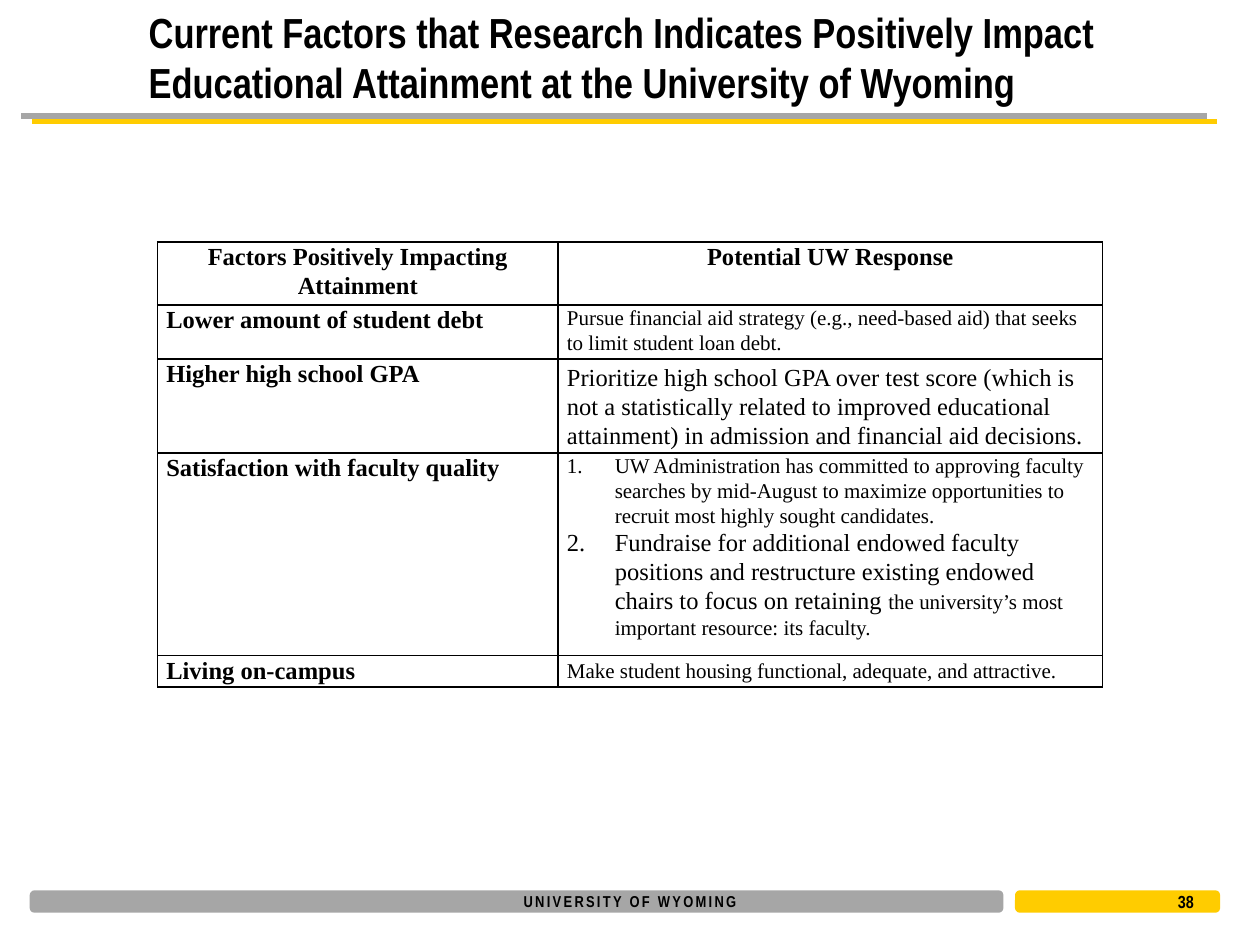
from dataclasses import dataclass

from lxml.etree import SubElement
from pptx import Presentation
from pptx.dml.color import RGBColor
from pptx.enum.shapes import MSO_CONNECTOR, MSO_SHAPE
from pptx.enum.text import MSO_ANCHOR, MSO_AUTO_SIZE, PP_ALIGN
from pptx.oxml.ns import qn
from pptx.util import Inches, Pt


@dataclass(frozen=True)
class Theme:
    """Colours, fonts and type sizes of the slide."""
    ink: str = "000000"
    grey: str = "A6A6A6"
    gold: str = "FFCC00"
    heading_font: str = "Arial Narrow"
    table_font: str = "Times New Roman"
    title: int = 24
    large: int = 14
    small: int = 12
    page: int = 10
    footer: int = 9


THEME = Theme()
HEADERS = ("Factors Positively Impacting Attainment", "Potential UW Response")
FACTORS = [
    ("Lower amount of student debt", MSO_ANCHOR.TOP, [[
        ("Pursue financial aid strategy (e.g., need-based aid) that seeks to limit "
         "student loan debt.", THEME.small)]]),
    ("Higher high school GPA", MSO_ANCHOR.MIDDLE, [[
        ("Prioritize high school GPA over test score (which is not a statistically related "
         "to improved educational attainment) in admission and financial aid decisions.",
         THEME.large)]]),
    ("Satisfaction with faculty quality", MSO_ANCHOR.TOP, [
        [("UW Administration has committed to approving faculty searches by mid-August to "
          "maximize opportunities to recruit most highly sought candidates.", THEME.small)],
        [("Fundraise for additional endowed faculty positions and restructure existing "
          "endowed chairs to focus on retaining ", THEME.large),
         ("the university’s most important resource: its faculty.", THEME.small)]]),
    ("Living on-campus", MSO_ANCHOR.MIDDLE, [[
        ("Make student housing functional, adequate, and attractive.", THEME.small)]]),
]
FACTOR_WIDTH = 3.18


def write(paragraph, text, size, font=THEME.heading_font, bold=True, align=PP_ALIGN.LEFT,
          line_spacing=None, tracking=None):
    """Append a formatted run to a paragraph."""
    paragraph.alignment = align
    if line_spacing:
        paragraph.line_spacing = line_spacing
    run = paragraph.add_run()
    run.text = text
    run.font.name, run.font.size, run.font.bold = font, Pt(size), bold
    run.font.color.rgb = RGBColor.from_string(THEME.ink)
    if tracking:
        run.font._element.set("spc", str(tracking))


def add_label(slide, box, text, margin=0.1, **style):
    """Place one line of text, vertically centred, in a box."""
    frame = slide.shapes.add_textbox(*map(Inches, box)).text_frame
    frame.word_wrap = True
    frame.margin_left = frame.margin_right = Inches(margin)
    frame.vertical_anchor = MSO_ANCHOR.MIDDLE
    write(frame.paragraphs[0], text, **style)


def add_bar(slide, box, color):
    """Draw a rounded footer bar."""
    bar = slide.shapes.add_shape(MSO_SHAPE.ROUNDED_RECTANGLE, *map(Inches, box))
    bar.shadow.inherit = False
    bar.fill.solid()
    bar.fill.fore_color.rgb = bar.line.color.rgb = RGBColor.from_string(color)
    bar.line.width = Pt(2)


def add_title(slide, box):
    """Place the slide title in its placeholder."""
    title = slide.shapes.title
    title.left, title.top, title.width, title.height = map(Inches, box)
    frame = title.text_frame
    frame.word_wrap = True
    frame.auto_size = MSO_AUTO_SIZE.NONE
    frame.vertical_anchor = MSO_ANCHOR.MIDDLE
    write(frame.paragraphs[0], "Current Factors that Research Indicates Positively Impact "
          "Educational Attainment at the University of Wyoming", THEME.title)


def add_rule(slide, left, top, width):
    """Draw the grey rule with its hard gold shadow."""
    rule = slide.shapes.add_connector(
        MSO_CONNECTOR.STRAIGHT, *map(Inches, (left, top, left + width, top)))
    rule.line.color.rgb = RGBColor.from_string(THEME.grey)
    rule.line.width = Pt(3)
    effects = SubElement(rule._element.spPr, qn("a:effectLst"))
    shadow = SubElement(effects, qn("a:outerShdw"), blurRad="0", dist=str(Pt(6.7)),
                        dir=str(27 * 60000), algn="ctr", rotWithShape="0")
    SubElement(shadow, qn("a:srgbClr"), val=THEME.gold)


def add_footer(slide, left, top, width, height):
    """Draw the footer bars, the university name and the page number."""
    page_width, gap = 1.6, 0.12
    add_bar(slide, (left, top, width - page_width - gap, height), THEME.grey)
    add_bar(slide, (left + width - page_width, top, page_width, height), THEME.gold)
    add_label(slide, (left + 3.85, top - 0.05, 1.8, 0.25), "UNIVERSITY OF WYOMING",
              margin=0, size=THEME.footer, align=PP_ALIGN.CENTER, tracking=130)
    add_label(slide, (left + 9, top - 0.02, 0.5, 0.19), "38", size=THEME.page)


def number_paragraph(paragraph):
    """Give a paragraph a hanging automatic number."""
    properties = paragraph._p.get_or_add_pPr()
    properties.set("marL", str(Inches(0.38)))
    properties.set("indent", str(-Inches(0.38)))
    SubElement(properties, qn("a:buFont"), typeface="+mj-lt")
    SubElement(properties, qn("a:buAutoNum"), type="arabicPeriod")


def fill_cell(cell, paragraphs, anchor=MSO_ANCHOR.TOP, **style):
    """Border a cell and write its paragraphs, numbered when several."""
    cell.margin_left = cell.margin_right = Inches(0.07)
    cell.margin_top = cell.margin_bottom = 0
    cell.vertical_anchor = anchor
    for side in ("lnL", "lnR", "lnT", "lnB"):
        border = SubElement(cell._tc.get_or_add_tcPr(), qn(f"a:{side}"), w=str(Pt(1)))
        SubElement(SubElement(border, qn("a:solidFill")), qn("a:srgbClr"), val=THEME.ink)
    cell.fill.background()
    frame = cell.text_frame
    for index, runs in enumerate(paragraphs):
        paragraph = frame.add_paragraph() if index else frame.paragraphs[0]
        if len(paragraphs) > 1:
            number_paragraph(paragraph)
        for text, size in runs:
            write(paragraph, text, size, font=THEME.table_font, line_spacing=1.07, **style)


def add_factor_table(slide, left, top, width, height):
    """Build the table of factors and responses, its rows as tall as their text."""
    holder = slide.shapes.add_table(
        len(FACTORS) + 1, len(HEADERS), *map(Inches, (left, top, width, height)))
    table = holder.table
    table.first_row = table.horz_banding = False
    for column, column_width in zip(table.columns, (FACTOR_WIDTH, width - FACTOR_WIDTH)):
        column.width = Inches(column_width)
    for row in table.rows:
        row.height = Inches(0)
    holder.height = Inches(height)
    for column, header in enumerate(HEADERS):
        fill_cell(table.cell(0, column), [[(header, THEME.large)]], align=PP_ALIGN.CENTER)
    for row, (factor, anchor, response) in enumerate(FACTORS, start=1):
        fill_cell(table.cell(row, 0), [[(factor, THEME.large)]])
        fill_cell(table.cell(row, 1), response, anchor=anchor, bold=False)


def main():
    """Build and save the slide."""
    presentation = Presentation()
    presentation.slide_width, presentation.slide_height = Inches(10), Inches(7.5)
    slide = presentation.slides.add_slide(presentation.slide_layouts[5])
    add_rule(slide, 0.17, 0.92, 9.41)
    add_footer(slide, 0.25, 7.08, 9.42, 0.15)
    add_title(slide, (1.08, 0.15, 8.75, 0.6))
    add_factor_table(slide, 1.25, 1.92, 7.5, 3.53)
    presentation.save("out.pptx")


if __name__ == "__main__":
    main()
